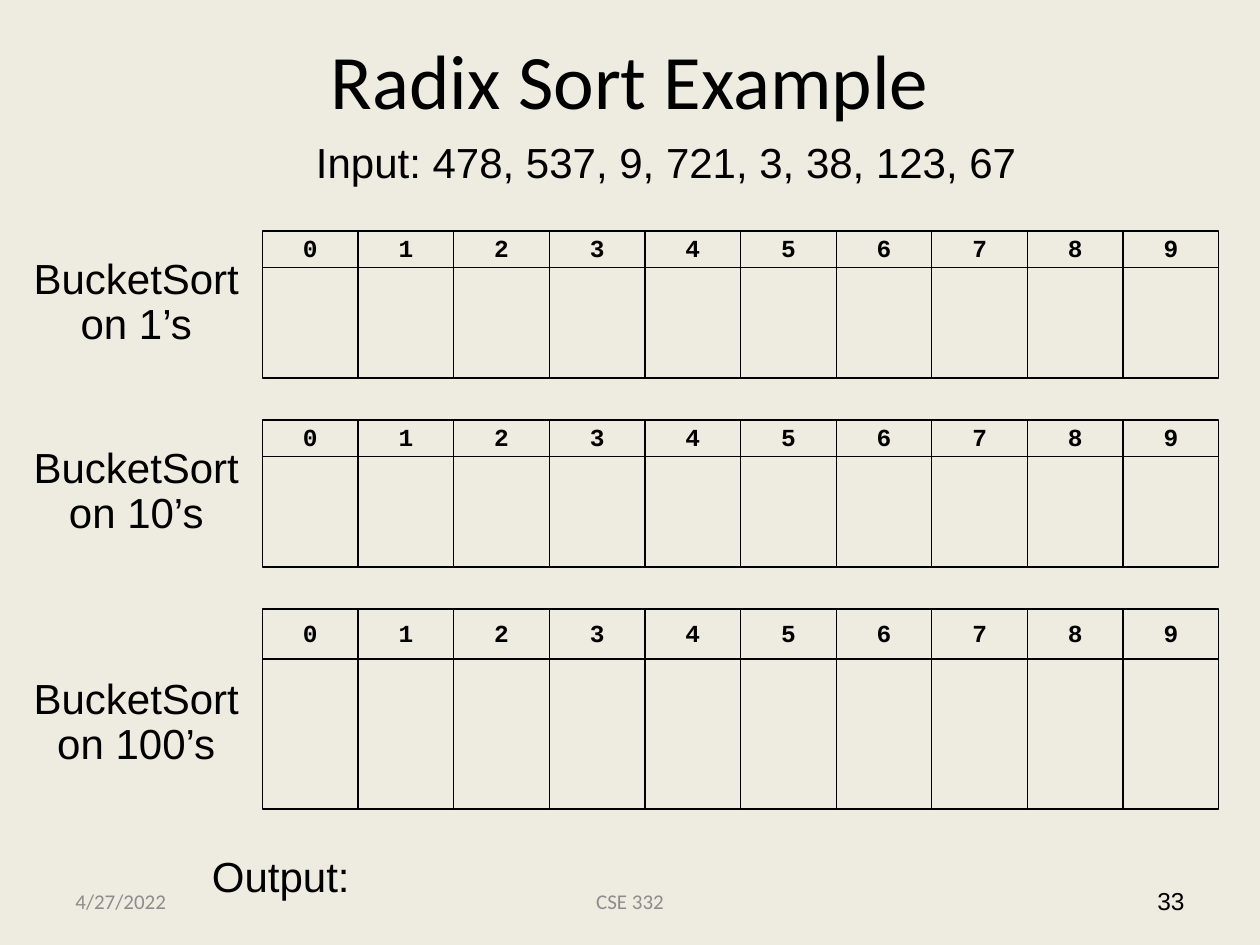
from pptx import Presentation
from pptx.dml.color import RGBColor
from pptx.enum.shapes import MSO_SHAPE as Shape
from pptx.enum.text import MSO_ANCHOR as Anchor, PP_ALIGN as Align
from pptx.util import Pt

COLORS = {"background": "EEECE1", "ink": "000000", "footer": "8C8C8C"}

# Content
TITLE = "Radix Sort Example"
DIGITS = "0123456789"
# label, label top, bucket top, header height, bucket height
PASSES = [
    ("BucketSort\non 1’s", 144, 132, 21, 63),
    ("BucketSort\non 10’s", 252, 240, 21, 63),
    ("BucketSort\non 100’s", 384, 348, 28.6, 85.7),
]
# text, (left, top, width, height)
NOTES = [
    ("Input: 478, 537, 9, 721, 3, 38, 123, 67", (173.5, 78, 414.7, 36)),
    ("Output:", (114, 486, 92.9, 36)),
]
# text, left, width, alignment, font, size, color
FOOTERS = [
    ("4/27/2022", 36, 168, Align.LEFT, "Calibri", 12, "footer"),
    ("CSE 332", 246, 228, Align.CENTER, "Calibri", 12, "footer"),
    ("33", 516, 168, Align.RIGHT, "Arial", 14, "ink"),
]
BUCKET_LEFT, BUCKET_WIDTH = 150, 54.64
LABEL_LEFT, LABEL_WIDTH, LABEL_HEIGHT = 12, 131.8, 64.8
FOOTER_TOP, FOOTER_HEIGHT = 500.5, 28.8


def color(name):
    return RGBColor.from_string(COLORS[name])


def write(shape, text, font, size, align=Align.LEFT, ink="ink",
          bold=False, spacing=None, anchor=Anchor.MIDDLE, wrap=False):
    frame = shape.text_frame
    frame.text = text
    frame.word_wrap = wrap
    frame.vertical_anchor = anchor
    for para in frame.paragraphs:
        para.alignment = align
        para.line_spacing = spacing
        for span in para.runs:
            span.font.name, span.font.size = font, Pt(size)
            span.font.bold = bold
            span.font.color.rgb = color(ink)


def add_text(page, place, text, *style, **options):
    box = page.shapes.add_textbox(*map(Pt, place))
    write(box, text, *style, **options)


def add_cell(group, left, top, height):
    cell = group.shapes.add_shape(
        Shape.RECTANGLE, Pt(left), Pt(top), Pt(BUCKET_WIDTH), Pt(height))
    cell.shadow.inherit = False
    cell.fill.background()
    cell.line.color.rgb = color("ink")
    cell.line.width = Pt(0.75)
    return cell


def add_buckets(page, top, header_height, bucket_height):
    group = page.shapes.add_group_shape()
    for column, digit in enumerate(DIGITS):
        left = BUCKET_LEFT + column * BUCKET_WIDTH
        header = add_cell(group, left, top, header_height)
        write(header, digit, "Courier New", 14, Align.CENTER,
              bold=True, spacing=0.9)
        add_cell(group, left, top + header_height, bucket_height)


def main():
    deck = Presentation()
    deck.slide_width, deck.slide_height = Pt(720), Pt(540)
    page = deck.slides.add_slide(deck.slide_layouts[5])
    page.background.fill.solid()
    page.background.fill.fore_color.rgb = color("background")

    # Title
    title = page.shapes.title
    title.left, title.top, title.width, title.height = map(Pt, (54, 0, 612, 90))
    write(title, TITLE, "Calibri", 44, Align.CENTER, wrap=True)

    # Sorting passes
    for label, label_top, top, header_height, bucket_height in PASSES:
        add_buckets(page, top, header_height, bucket_height)
        add_text(page, (LABEL_LEFT, label_top, LABEL_WIDTH, LABEL_HEIGHT), label,
                 "Arial", 24, Align.CENTER, spacing=0.9, anchor=Anchor.TOP)

    # Input and output
    for text, place in NOTES:
        add_text(page, place, text, "Arial", 24, spacing=0.9, anchor=Anchor.TOP)

    # Footer
    for text, left, width, align, font, size, ink in FOOTERS:
        add_text(page, (left, FOOTER_TOP, width, FOOTER_HEIGHT), text,
                 font, size, align, ink, wrap=True)

    deck.save("out.pptx")


if __name__ == "__main__":
    main()
